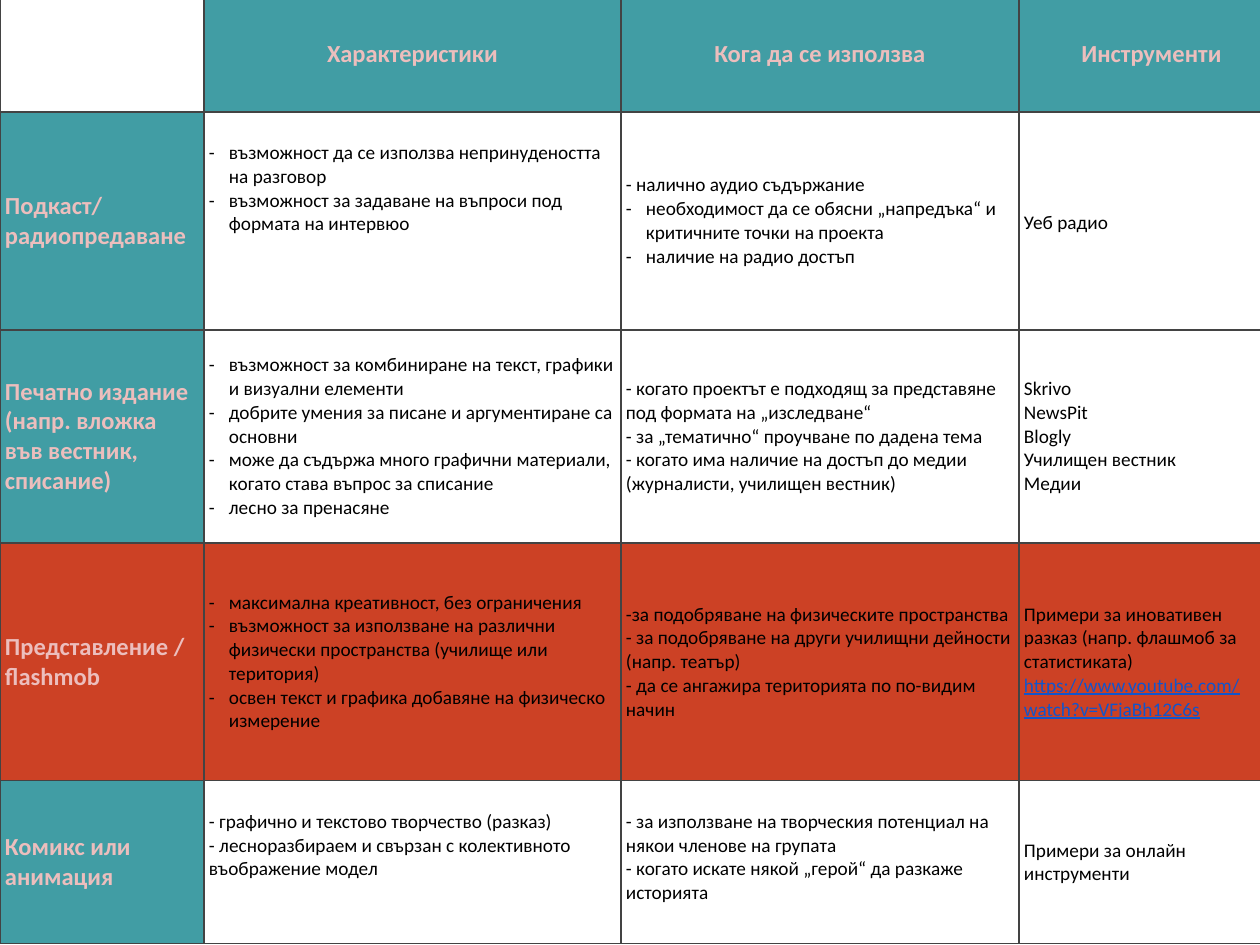
from lxml.etree import SubElement
from pptx import Presentation
from pptx.dml.color import RGBColor
from pptx.enum.text import MSO_ANCHOR, PP_ALIGN
from pptx.oxml.ns import qn
from pptx.util import Emu, Pt

PX = 914400 / 126
TEAL, RED, WHITE = "419DA4", "CC4125", "FFFFFF"
PINK, BLACK, BLUE, GREY = "ECBEBD", "000000", "1155CC", "434343"
BULLET = "* "  # marks the paragraphs that get a hanging dash


def px(length):
    return Emu(round(length * PX))


def write(para, text, size=11, color=BLACK, bold=False, underline=False, align=PP_ALIGN.LEFT):
    if text.startswith(BULLET):
        props = para._p.get_or_add_pPr()
        props.set("marL", str(px(20)))
        props.set("indent", str(px(-28)))
        SubElement(props, qn("a:buFont"), typeface="Calibri")
        SubElement(props, qn("a:buChar"), char="-")
    para.text = text.removeprefix(BULLET)
    para.alignment = align
    for span in para.runs:
        span.font.name = "Calibri"
        span.font.size = Pt(size)
        span.font.bold = bold
        span.font.underline = underline
        span.font.color.rgb = RGBColor.from_string(color)


# Each cell is a list of paragraphs
rows = [
    [[], ["Характеристики"], ["Кога да се използва"], ["Инструменти"]],
    [
        ["Подкаст/", "радиопредаване"],
        ["* възможност да се използва непринудеността на разговор",
         "* възможност за задаване на въпроси под формата на интервюо"],
        ["- налично аудио съдържание",
         "* необходимост да се обясни „напредъка“ и критичните точки на проекта",
         "* наличие на радио достъп"],
        ["Уеб радио"],
    ],
    [
        ["Печатно издание\v(напр. вложка във вестник, списание)"],
        ["* възможност за комбиниране на текст, графики и визуални елементи",
         "* добрите умения за писане и аргументиране са основни",
         "* може да съдържа много графични материали, когато става въпрос за списание",
         "* лесно за пренасяне"],
        ["- когато проектът е подходящ за представяне под формата на „изследване“",
         "- за „тематично“ проучване по дадена тема",
         "- когато има наличие на достъп до медии (журналисти, училищен вестник)"],
        ["Skrivo", "NewsPit", "Blogly", "Училищен вестник", "Медии"],
    ],
    [
        ["Представление / flashmob"],
        ["* максимална креативност, без ограничения",
         "* възможност за използване на различни физически пространства (училище или територия)",
         "* освен текст и графика добавяне на физическо измерение"],
        ["-за подобряване на физическите пространства",
         "- за подобряване на други училищни дейности (напр. театър)",
         "- да се ангажира територията по по-видим начин"],
        ["Примери за иновативен разказ (напр. флашмоб за статистиката)",
         "https://www.youtube.com/watch?v=VFjaBh12C6s"],
    ],
    [
        ["Комикс или анимация"],
        ["- графично и текстово творчество (разказ)",
         "- лесноразбираем и свързан с колективното въображение модел"],
        ["- за използване на творческия потенциал на някои членове на групата",
         "- когато искате някой „герой“ да разкаже историята"],
        ["Примери за онлайн инструменти"],
    ],
]
column_widths = [204, 417, 398, 265]
row_heights = [115, 218, 213, 238, 163]
top_cells = {(1, 1), (4, 1), (4, 2)}  # start one line below the top edge

deck = Presentation()
deck.slide_width, deck.slide_height = px(1260), px(945)
page = deck.slides.add_slide(deck.slide_layouts[6])

# Table grid
table = page.shapes.add_table(len(rows), len(column_widths), px(0), px(-3),
                              px(sum(column_widths)), px(sum(row_heights))).table
table.first_row = table.horz_banding = False
for column, width in zip(table.columns, column_widths):
    column.width = px(width)
for row, height in zip(table.rows, row_heights):
    row.height = px(height)

# Cells
for r, row in enumerate(rows):
    for c, paragraphs in enumerate(row):
        cell = table.cell(r, c)
        at_top = (r, c) in top_cells
        cell.margin_left = cell.margin_right = cell.margin_bottom = px(5)
        cell.margin_top = px(29 if at_top else 5)
        cell.vertical_anchor = MSO_ANCHOR.TOP if at_top else MSO_ANCHOR.MIDDLE

        # Borders go before the fill
        for side in ("lnL", "lnR", "lnT", "lnB"):
            line = SubElement(cell._tc.get_or_add_tcPr(), qn(f"a:{side}"), w=str(Pt(0.75)))
            SubElement(SubElement(line, qn("a:solidFill")), qn("a:srgbClr"), val=GREY)

        heading = r == 0 or c == 0
        if r == 3 or heading:
            fill = RED if r == 3 else TEAL if paragraphs else WHITE
            cell.fill.solid()
            cell.fill.fore_color.rgb = RGBColor.from_string(fill)
        else:
            cell.fill.background()

        frame = cell.text_frame
        for i, text in enumerate(paragraphs):
            para = frame.add_paragraph() if i else frame.paragraphs[0]
            if heading:
                write(para, text, size=14, color=PINK, bold=True,
                      align=PP_ALIGN.LEFT if r else PP_ALIGN.CENTER)
            elif text.startswith("https"):
                write(para, text, color=BLUE, underline=True)
            else:
                write(para, text)

# The single radio tool is justified with looser spacing
radio = table.cell(1, 3).text_frame.paragraphs[0]
radio.alignment = PP_ALIGN.JUSTIFY
radio.line_spacing = 1.15
radio.space_after = Pt(10)

deck.save("out.pptx")
